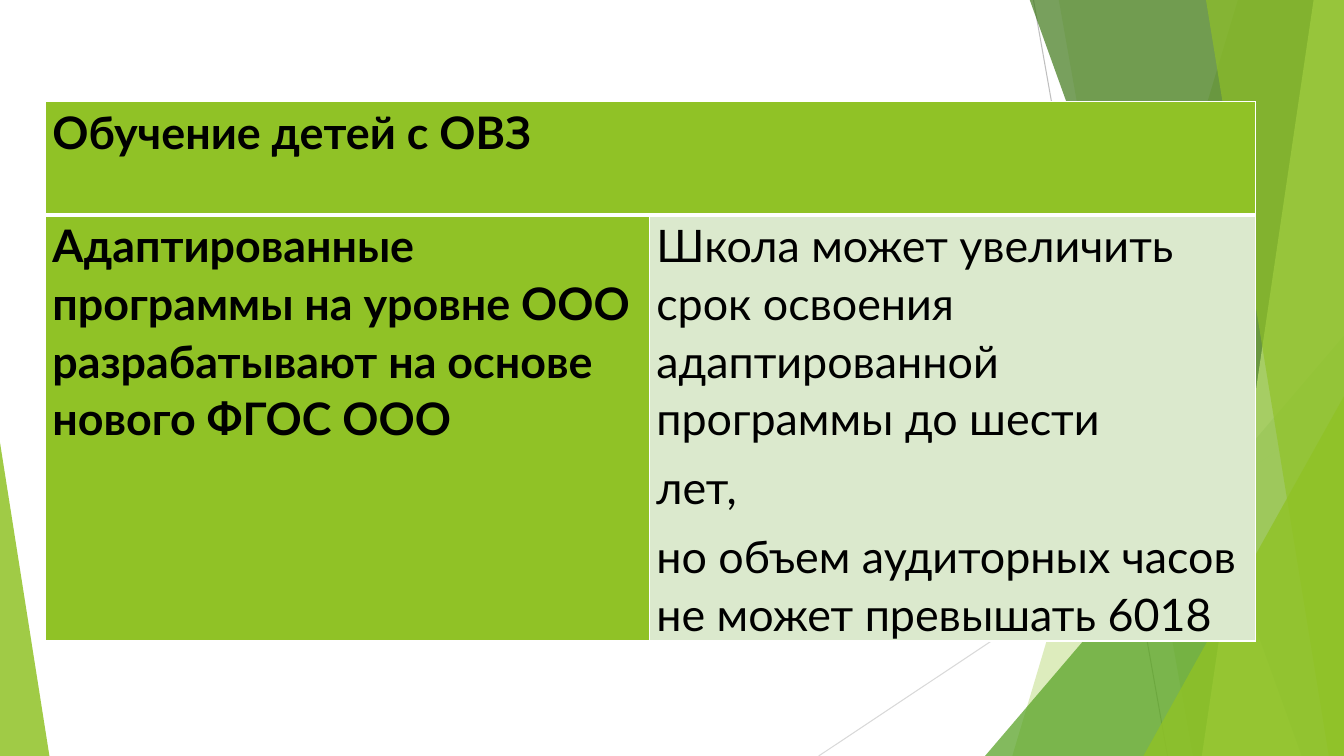
import pptx
import pptx.dml.color
import pptx.enum.shapes
import pptx.oxml
import pptx.oxml.ns
import pptx.util
from pptx.util import Inches

GREEN, WHITE, BLACK = "90C226", "FFFFFF", "000000"


def rgb(color):
    return pptx.dml.color.RGBColor.from_string(color)


def add_child(parent, tag, **attrs):
    child = pptx.oxml.parse_xml(f"<{tag} {pptx.oxml.ns.nsdecls('a')}/>")
    for name, value in attrs.items():
        child.set(name, str(value))
    parent.append(child)
    return child


prs = pptx.Presentation()
prs.slide_width, prs.slide_height = Inches(13.33), Inches(7.5)
s = prs.slides.add_slide(prs.slide_layouts[6])

# Thin background lines
for x1, y1, x2, y2, color in [(10.25, 0, 11.58, 7.5, "BFBFBF"),
                              (13.33, 4.03, 8.12, 7.5, "D9D9D9")]:
    line = s.shapes.add_connector(pptx.enum.shapes.MSO_CONNECTOR.STRAIGHT,
                                  Inches(x1), Inches(y1), Inches(x2), Inches(y2))
    line.line.color.rgb = rgb(color)
    line.line.width = pptx.util.Pt(0.75)
    add_child(line._element.spPr, "a:effectLst")

# Translucent facets, back to front. A band is (top left x, bottom left x) and
# reaches the right edge; a triangle is (left, top, width, height, apex).
facets = [
    ((12.28, 10.04), GREEN, 30),
    ((10.5, 11.83), GREEN, 20),
    ((9.77, 3.33, 3.56, 4.17, 1), "54A021", 72),
    ((10.21, 12.91), "3F7819", 70),
    ((13.03, 11.92), "C0E474", 70),
    ((11.96, 13.18), GREEN, 65),
    ((11.34, 3.93, 1.99, 3.57, 1), GREEN, 80),
    ((0, 4.39, 0.49, 3.11, 0), GREEN, 85),
]
for geometry, color, opacity in facets:
    if len(geometry) == 2:
        top_x, bottom_x = geometry
        corners = [(top_x, -0.01), (13.33, -0.01), (13.33, 7.5), (bottom_x, 7.5)]
        points = [(Inches(x), Inches(y)) for x, y in corners]
        builder = s.shapes.build_freeform(*points[0])
        builder.add_line_segments(points[1:], close=True)
        sp = builder.convert_to_shape()
    else:
        *box, apex = geometry
        sp = s.shapes.add_shape(pptx.enum.shapes.MSO_SHAPE.ISOSCELES_TRIANGLE,
                                *map(Inches, box))
        sp.adjustments[0] = apex
    sp.shadow.inherit = False
    sp.line.fill.background()
    sp.fill.solid()
    sp.fill.fore_color.rgb = rgb(color)
    color_node = sp._element.spPr.find(".//" + pptx.oxml.ns.qn("a:srgbClr"))
    add_child(color_node, "a:alpha", val=opacity * 1000)

# Table
table = s.shapes.add_table(2, 2, Inches(0.45), Inches(1.01), Inches(12), Inches(5.33)).table
table.first_row = table.horz_banding = False
for column, width in zip(table.columns, (5.99, 6.01)):
    column.width = Inches(width)
for row, height in zip(table.rows, (1.12, 4.21)):
    row.height = Inches(height)
table.cell(0, 0).merge(table.cell(0, 1))

# (row, column): text, fill, bold
cells = {
    (0, 0): ("Обучение детей с ОВЗ", GREEN, True),
    (0, 1): ("", GREEN, True),
    (1, 0): ("Адаптированные программы на уровне ООО разрабатывают на основе "
             "нового ФГОС ООО", GREEN, True),
    (1, 1): ("Школа может увеличить срок освоения адаптированной программы до шести\n"
             "лет,\n"
             "но объем аудиторных часов не может превышать 6018", "DBE9CD", False),
}
for (row, column), (text, fill, bold) in cells.items():
    cell = table.cell(row, column)
    cell.margin_left = cell.margin_right = Inches(0.07)
    cell.margin_top = cell.margin_bottom = 0
    tcPr = cell._tc.get_or_add_tcPr()
    for side in "LRTB":
        under_header = (row, side) in [(0, "B"), (1, "T")]
        border = add_child(tcPr, f"a:ln{side}", w=pptx.util.Pt(3 if under_header else 1))
        add_child(add_child(border, "a:solidFill"), "a:srgbClr", val=WHITE)
    cell.fill.solid()
    cell.fill.fore_color.rgb = rgb(fill)
    if not text:
        continue
    cell.text_frame.text = text
    for p in cell.text_frame.paragraphs:
        p.line_spacing = 1.07
        p.space_after = pptx.util.Pt(8)
        for r in p.runs:
            r.font.name = "Lato"
            r.font.size = pptx.util.Pt(32)
            r.font.bold = bold
            r.font.color.rgb = rgb(BLACK)

prs.save("out.pptx")
